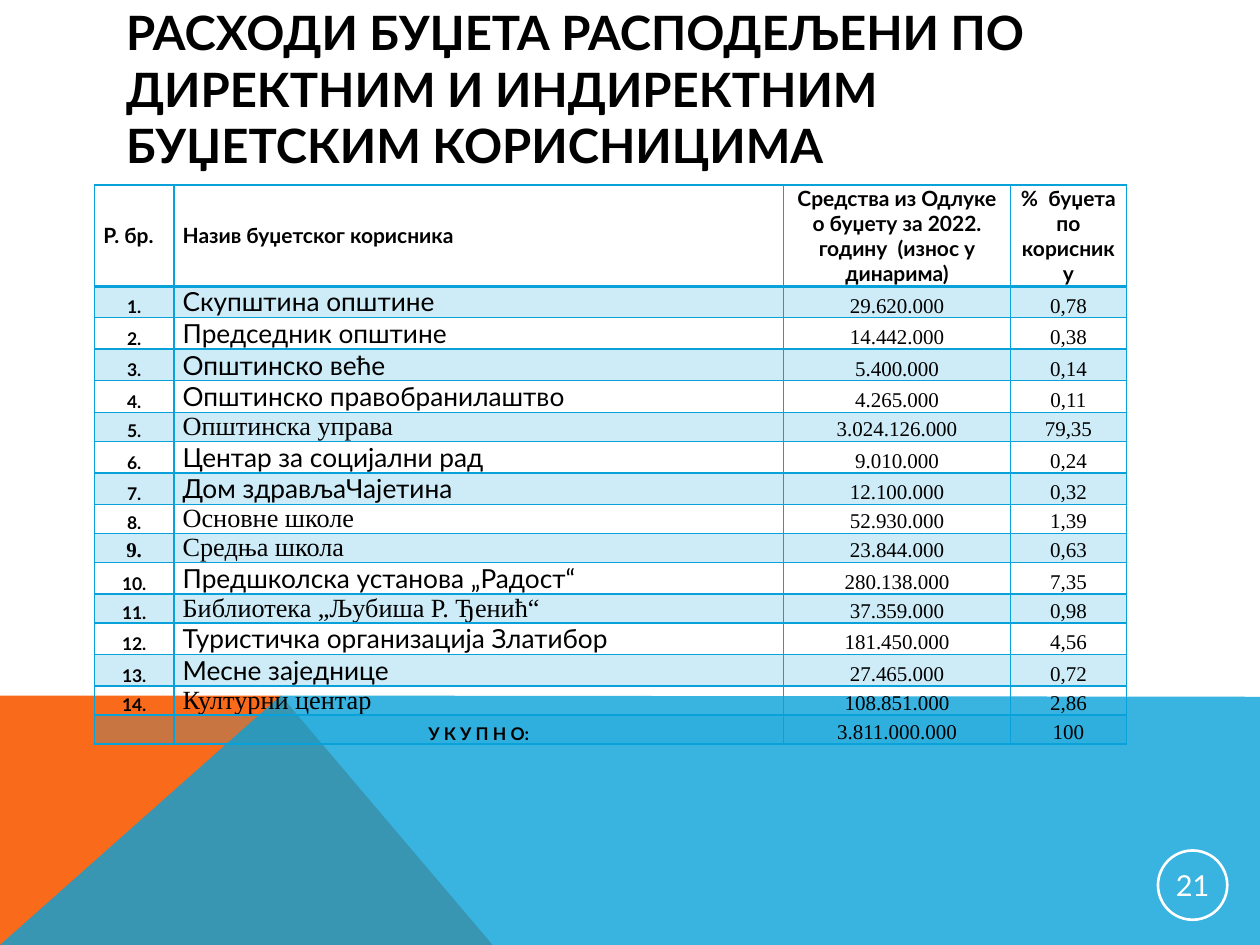
from lxml import etree
from pptx import Presentation
from pptx.dml.color import RGBColor
from pptx.enum import shapes, text
from pptx.oxml.ns import qn
from pptx.util import Inches, Pt

HUES = {"blue": "08A1D9", "orange": "F96A1B", "black": "000000", "white": "FFFFFF"}
SANS, SERIF = "Lato", "Times New Roman"
LEFT, MID = text.PP_ALIGN.LEFT, text.PP_ALIGN.CENTER


def paint(fill, hue, props, alpha=100):
    """Fill with a colour; props is the XML parent of the fill."""
    fill.solid()
    fill.fore_color.rgb = RGBColor.from_string(HUES[hue])
    if alpha < 100:
        color = props.find(qn("a:solidFill")).find(qn("a:srgbClr"))
        etree.SubElement(color, qn("a:alpha")).set("val", str(alpha * 1000))


def write(frame, words, size, face=SANS, bold=False, align=LEFT, hue="black"):
    frame.text = words
    para = frame.paragraphs[0]
    para.alignment = align
    font = para.font
    font.size, font.name, font.bold = Pt(size), face, bold
    font.color.rgb = RGBColor.from_string(HUES[hue])


deck = Presentation()
deck.slide_width, deck.slide_height = Inches(10), Inches(7.5)
slide = deck.slides.add_slide(deck.slide_layouts[5])

# Coloured ground: orange wedge under a translucent blue one
wedges = [
    ("orange", 100, [(0, 7.5), (0, 5.52), (2.23, 5.52), (3.91, 7.5)]),
    ("blue", 80, [(0, 7.5), (2.23, 5.52), (10, 5.53), (10, 7.5)]),
]
for hue, alpha, points in wedges:
    spots = [(Inches(x), Inches(y)) for x, y in points]
    pen = slide.shapes.build_freeform(*spots[0])
    pen.add_line_segments(spots[1:], close=True)
    wedge = pen.convert_to_shape()
    wedge.shadow.inherit = False
    wedge.line.fill.background()
    paint(wedge.fill, hue, wedge._element.spPr, alpha)

# Title
title = slide.shapes.title
title.left, title.top = Inches(0.9), Inches(0.4)
title.width, title.height = Inches(8.22), Inches(0.6)
frame = title.text_frame
frame.word_wrap = True
frame.auto_size = text.MSO_AUTO_SIZE.NONE
frame.vertical_anchor = text.MSO_ANCHOR.MIDDLE
write(frame, "РАСХОДИ БУЏЕТА РАСПОДЕЉЕНИ ПО ДИРЕКТНИМ И ИНДИРЕКТНИМ "
      "БУЏЕТСКИМ КОРИСНИЦИМА", 27, bold=True)

# Budget table
heads = ["Р. бр.", "Назив буџетског корисника",
         "Средства из Одлуке о буџету за 2022. годину  (износ у динарима)",
         "%  буџета по кориснику"]
users = [
    ("Скупштина општине", "29.620.000", "0,78"),
    ("Председник општине", "14.442.000", "0,38"),
    ("Општинско веће", "5.400.000", "0,14"),
    ("Општинско правобранилаштво", "4.265.000", "0,11"),
    ("Општинска управа", "3.024.126.000", "79,35"),
    ("Центар за социјални рад", "9.010.000", "0,24"),
    ("Дом здрављаЧајетина", "12.100.000", "0,32"),
    ("Основне школе", "52.930.000", "1,39"),
    ("Средња школа", "23.844.000", "0,63"),
    ("Предшколска установа „Радост“", "280.138.000", "7,35"),
    ("Библиотека „Љубиша Р. Ђенић“", "37.359.000", "0,98"),
    ("Туристичка организација Златибор", "181.450.000", "4,56"),
    ("Месне заједнице", "27.465.000", "0,72"),
    ("Културни центар", "108.851.000", "2,86"),
]
rows = [heads]
rows += [(f"{n}.", *user) for n, user in enumerate(users, 1)]
rows.append(("", "У К У П Н О:", "3.811.000.000", "100"))
last = len(rows) - 1
serif = {5, 8, 9, 11, 14}  # rows whose names are set in the serif face

grid = slide.shapes.add_table(len(rows), 4, Inches(0.75), Inches(1.47),
                              Inches(8.19), Inches(4.25)).table
grid.first_row = grid.horz_banding = False
for col, width in zip(grid.columns, [0.63, 4.84, 1.8, 0.92]):
    col.width = Inches(width)

for r, row in enumerate(rows):
    grid.rows[r].height = Inches(0.23 if r else 0.8)
    for c, words in enumerate(row):
        cell = grid.cell(r, c)
        cell.margin_left = cell.margin_right = Inches(0.07)
        cell.margin_top = cell.margin_bottom = 0
        cell.vertical_anchor = text.MSO_ANCHOR.BOTTOM if r else text.MSO_ANCHOR.MIDDLE

        # Text style by column
        if r == 0:
            style = (12, SANS, True, MID if c > 1 else LEFT)
        elif c > 1:
            style = (12, SERIF, False, MID)
        elif c == 0 or r == last:
            style = (12, SERIF, True, MID) if r == 9 else (10, SANS, True, MID)
        else:
            style = (15, SERIF if r in serif else SANS, False, LEFT)
        write(cell.text_frame, words, *style)
        if not words:
            para = cell.text_frame.paragraphs[0]._p
            etree.SubElement(para, qn("a:endParaRPr")).set("sz", "1000")

        # Borders, then banded fill
        props = cell._tc.get_or_add_tcPr()
        for side in "LRTB":
            thick = (r == 0 and side == "B") or (r == 1 and side == "T")
            edge = etree.SubElement(props, qn(f"a:ln{side}"), w=str(Pt(2 if thick else 1)))
            ink = etree.SubElement(edge, qn("a:solidFill"))
            etree.SubElement(ink, qn("a:srgbClr"), val=HUES["blue"])
        if r % 2:
            paint(cell.fill, "blue", props, 20)
        else:
            cell.fill.background()

# Page number
badge = slide.shapes.add_shape(shapes.MSO_SHAPE.OVAL, Inches(9.19), Inches(6.75),
                               Inches(0.55), Inches(0.55))
badge.shadow.inherit = False
badge.fill.background()
badge.line.color.rgb = RGBColor.from_string(HUES["white"])
badge.line.width = Pt(1.5)
frame = badge.text_frame
frame.margin_left = frame.margin_right = Inches(0.01)
frame.margin_top = frame.margin_bottom = Inches(0.01)
frame.vertical_anchor = text.MSO_ANCHOR.MIDDLE
write(frame, "21", 16.5, align=MID, hue="white")

deck.save("out.pptx")
